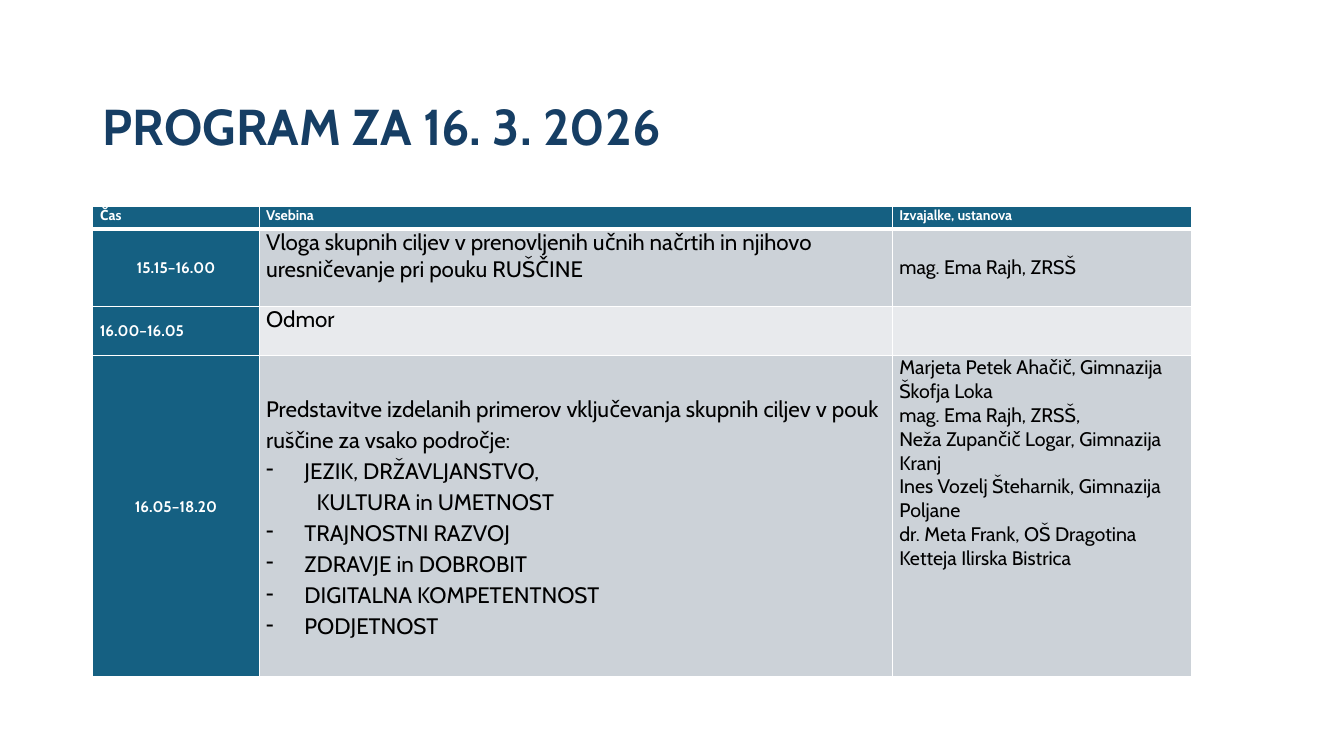
"""Build the programme slide with its timetable."""
from lxml import etree
from pptx import Presentation
from pptx.dml.color import RGBColor
from pptx.enum.text import MSO_ANCHOR, MSO_AUTO_SIZE, PP_ALIGN
from pptx.oxml.ns import qn
from pptx.util import Emu, Pt

TOP, MIDDLE = MSO_ANCHOR.TOP, MSO_ANCHOR.MIDDLE
LEFT, CENTER, JUSTIFY = PP_ALIGN.LEFT, PP_ALIGN.CENTER, PP_ALIGN.JUSTIFY
NO_FIT = MSO_AUTO_SIZE.NONE

WHITE = RGBColor(0xFF, 0xFF, 0xFF)
BLACK = RGBColor(0x00, 0x00, 0x00)
NAVY = RGBColor(0x16, 0x3E, 0x64)
TEAL = RGBColor(0x15, 0x60, 0x82)
GREY = RGBColor(0xCC, 0xD2, 0xD8)
PALE = RGBColor(0xE8, 0xEA, 0xED)

FONT = "Cabin"
COLUMNS = [165, 628, 297]
ROWS = [22, 77, 49, 318]
HEADINGS = ["Čas", "Vsebina", "Izvajalke, ustanova"]
AREAS = [
    "Predstavitve izdelanih primerov vključevanja skupnih ciljev v pouk "
    "ruščine za vsako področje:",
    "JEZIK, DRŽAVLJANSTVO,",
    "KULTURA in UMETNOST",
    "TRAJNOSTNI RAZVOJ",
    "ZDRAVJE in DOBROBIT",
    "DIGITALNA KOMPETENTNOST",
    "PODJETNOST",
]
SPEAKERS = [
    "Marjeta Petek Ahačič, Gimnazija Škofja Loka",
    "mag. Ema Rajh, ZRSŠ,",
    "Neža Zupančič Logar, Gimnazija Kranj",
    "Ines Vozelj Šteharnik, Gimnazija Poljane",
    "dr. Meta Frank, OŠ Dragotina Ketteja Ilirska Bistrica",
]


def px(n):
    """Turn px, a hundred to the inch, into EMU."""
    return Emu(n * 9144)


def style(p, size, color, bold=False, align=LEFT):
    """Align a paragraph and format its runs."""
    p.alignment = align
    for r in p.runs:
        r.font.name = FONT
        r.font.size = Pt(size)
        r.font.bold = bold
        r.font.color.rgb = color


def add_title(s, text):
    """Fill and place the title placeholder."""
    sp = s.shapes.title
    sp.left, sp.top, sp.width, sp.height = px(92), px(56), px(1150), px(145)
    tf = sp.text_frame
    tf.text = text
    tf.auto_size = NO_FIT
    tf.vertical_anchor = MIDDLE
    tf.paragraphs[0].line_spacing = 0.9
    style(tf.paragraphs[0], 36, NAVY, True)


def set_borders(cell, top=1, bottom=1):
    """Draw white borders round a cell, widths in points."""
    widths = {"a:lnL": 1, "a:lnR": 1, "a:lnT": top, "a:lnB": bottom}
    for tag, width in widths.items():
        ln = etree.SubElement(cell._tc.get_or_add_tcPr(), qn(tag), w=str(Pt(width)))
        fill = etree.SubElement(ln, qn("a:solidFill"))
        etree.SubElement(fill, qn("a:srgbClr"), val=str(WHITE))


def fill_cell(cell, lines, size, color, bold=False, align=LEFT, anchor=TOP):
    """Write one paragraph per line into a cell."""
    cell.margin_left = cell.margin_right = px(7)
    cell.margin_top = cell.margin_bottom = 0
    cell.vertical_anchor = anchor
    cell.text_frame.text = "\n".join(lines)
    for p in cell.text_frame.paragraphs:
        style(p, size, color, bold, align)


def indent(p, left, bullet=None):
    """Indent a paragraph, with a hanging bullet if one is given."""
    pPr = p._p.get_or_add_pPr()
    pPr.set("marL", str(px(left)))
    pPr.set("indent", str(px(-left if bullet else 0)))
    if bullet:
        etree.SubElement(pPr, qn("a:buChar"), char=bullet)


def format_areas(tf):
    """Set the line spacing and dashes of the list of areas."""
    paragraphs = tf.paragraphs
    for p in paragraphs:
        p.line_spacing = 1.15
    for p in paragraphs[1:]:
        if p.text == "KULTURA in UMETNOST":
            indent(p, 50)
        else:
            indent(p, 38, "-")
    paragraphs[-1].space_after = Pt(8)


def add_table(s):
    """Add the timetable grid with its sizes, fills and borders."""
    frame = s.shapes.add_table(len(ROWS), len(COLUMNS), px(92), px(205),
                               px(sum(COLUMNS)), px(sum(ROWS)))
    table = frame.table
    for column, width in zip(table.columns, COLUMNS):
        column.width = px(width)
    for row, height in zip(table.rows, ROWS):
        row.height = px(height)
    for i, row_fill in enumerate([TEAL, GREY, PALE, GREY]):
        for j in range(len(COLUMNS)):
            cell = table.cell(i, j)
            set_borders(cell, 3 if i == 1 else 1, 3 if i == 0 else 1)
            cell.fill.solid()
            cell.fill.fore_color.rgb = row_fill if j else TEAL
    return table


def main():
    """Build and save the slide."""
    prs = Presentation()
    prs.slide_width, prs.slide_height = px(1333), px(750)
    s = prs.slides.add_slide(prs.slide_layouts[5])
    add_title(s, "PROGRAM ZA 16. 3. 2026")
    table = add_table(s)
    for j, heading in enumerate(HEADINGS):
        fill_cell(table.cell(0, j), [heading], 10, WHITE, True, JUSTIFY)
    times = [("15.15–16.00", CENTER), ("16.00–16.05", LEFT), ("16.05–18.20", CENTER)]
    for i, (time, align) in enumerate(times, 1):
        fill_cell(table.cell(i, 0), [time], 11, WHITE, True, align, MIDDLE)
    table.cell(3, 0).margin_bottom = px(18)
    fill_cell(table.cell(1, 1), [
        "Vloga skupnih ciljev v prenovljenih učnih načrtih in njihovo "
        "uresničevanje pri pouku RUŠČINE"], 16, BLACK)
    fill_cell(table.cell(2, 1), ["Odmor"], 16, BLACK)
    fill_cell(table.cell(3, 1), AREAS, 16, BLACK, anchor=MIDDLE)
    format_areas(table.cell(3, 1).text_frame)
    fill_cell(table.cell(1, 2), ["mag. Ema Rajh, ZRSŠ"], 14, BLACK, anchor=MIDDLE)
    fill_cell(table.cell(3, 2), SPEAKERS, 14, BLACK)
    prs.save("out.pptx")


if __name__ == "__main__":
    main()
